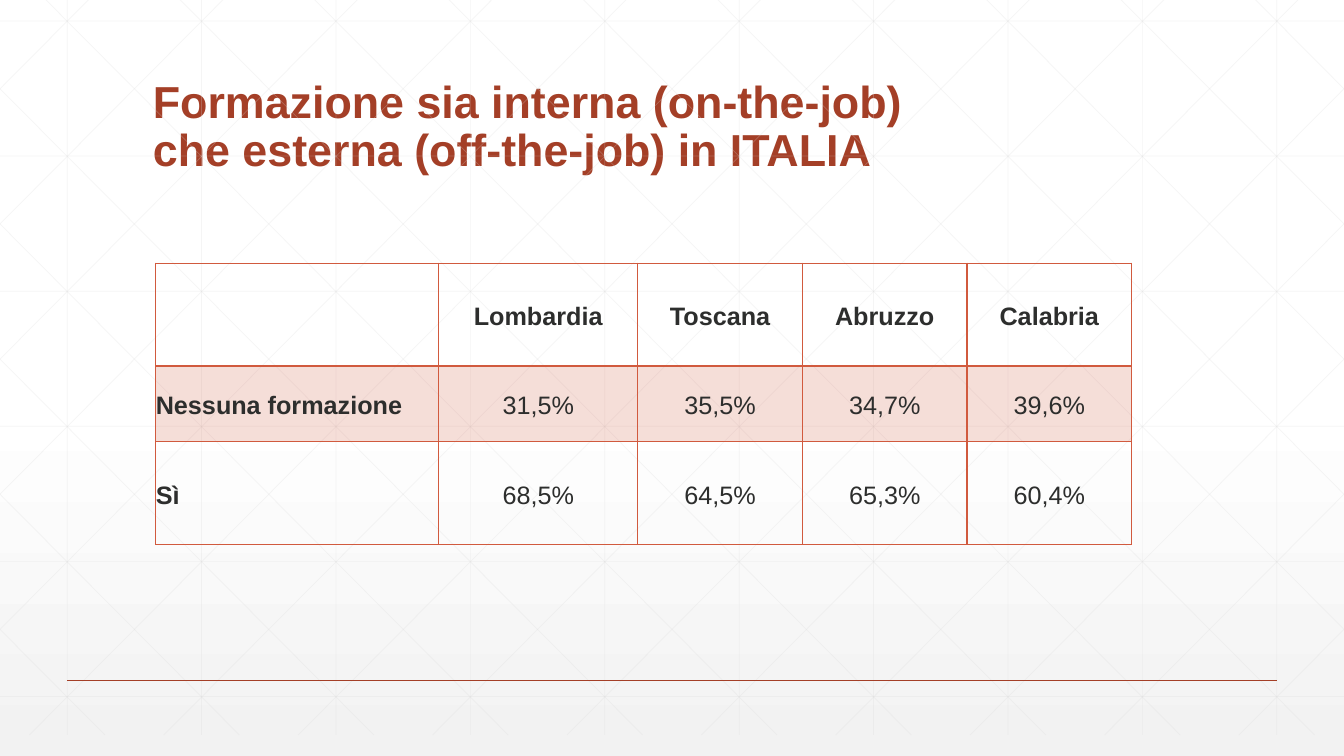
import pptx
import pptx.util
import pptx.dml.color
import pptx.enum.shapes
import pptx.enum.text
import pptx.oxml
import pptx.oxml.ns

Pt = pptx.util.Pt
ALIGN = pptx.enum.text.PP_ALIGN
ANCHOR = pptx.enum.text.MSO_ANCHOR
NS = pptx.oxml.ns.nsdecls("a")
qn = pptx.oxml.ns.qn

WIDTH, HEIGHT = 960, 540
COLORS = {
    "white": "FFFFFF",
    "mist": "F2F2F2",
    "grid": "D9D9D9",
    "rust": "A43F27",
    "accent": "D15A3E",
    "ink": "2D2E2D",
}
TRAINING = [
    ["", "Lombardia", "Toscana", "Abruzzo", "Calabria"],
    ["Nessuna formazione", "31,5%", "35,5%", "34,7%", "39,6%"],
    ["Sì", "68,5%", "64,5%", "65,3%", "60,4%"],
]


def rgb(name):
    return pptx.dml.color.RGBColor.from_string(COLORS[name])


def set_opacity(element, percent):
    color = next(element.iter(qn("a:srgbClr")))
    color.append(pptx.oxml.parse_xml(f'<a:alpha {NS} val="{percent * 1000}"/>'))


def write(frame, text, size, color, bold=False, align=ALIGN.LEFT, spacing=1.0):
    frame.word_wrap = True
    frame.text = text
    paragraph = frame.paragraphs[0]
    paragraph.alignment = align
    paragraph.line_spacing = spacing
    for run in paragraph.runs:
        run.font.name = "Arial"
        run.font.size = Pt(size)
        run.font.bold = bold
        run.font.color.rgb = rgb(color)


def draw_line(slide, start, end, color, width, opacity=100):
    line = slide.shapes.add_connector(
        pptx.enum.shapes.MSO_CONNECTOR.STRAIGHT, *(Pt(value) for value in (*start, *end))
    )
    line.line.color.rgb = rgb(color)
    line.line.width = Pt(width)
    properties = line._element.spPr
    if opacity < 100:
        set_opacity(properties, opacity)
    properties.append(pptx.oxml.parse_xml(f"<a:effectLst {NS}/>"))


def paint_background(slide):
    fill = slide.background.fill
    fill.gradient()
    gradient = next(slide._element.iter(qn("a:gradFill")))
    stops = "".join(
        f'<a:gs pos="{position * 1000}"><a:srgbClr val="{COLORS[name]}"/></a:gs>'
        for position, name in ((0, "white"), (53, "white"), (100, "mist"))
    )
    gradient.replace(
        gradient.find(qn("a:gsLst")),
        pptx.oxml.parse_xml(f"<a:gsLst {NS}>{stops}</a:gsLst>"),
    )
    gradient.find(qn("a:lin")).set("ang", "5400000")


def draw_lattice(slide, left, top, width, height):
    step, run = 96, 537
    right, bottom = left + width, top + height
    segments = [((x, top), (x, bottom)) for x in range(left + 48, right, step)]
    segments += [
        ((left, top + 30 + 96.5 * row), (right, top + 30 + 96.5 * row)) for row in range(6)
    ]
    diagonals = []
    for origin in range(left + 18 - 5 * step, right, step):
        ends = max(origin, left), min(origin + run, right)
        diagonals.append([(x, top + (x - origin) * height / run) for x in ends])
    segments += diagonals
    segments += [[(left + right - x, y) for x, y in diagonal] for diagonal in diagonals]
    for start, end in segments:
        draw_line(slide, start, end, "grid", 0.5, opacity=25)


def place_title(slide, left, top, width, height):
    title = slide.shapes.title
    title.left, title.top, title.width, title.height = map(Pt, (left, top, width, height))
    write(
        title.text_frame,
        "Formazione sia interna (on-the-job)\vche esterna (off-the-job) in ITALIA",
        size=32, color="rust", bold=True, spacing=0.9,
    )
    title.text_frame.vertical_anchor = ANCHOR.BOTTOM
    title.text_frame.auto_size = pptx.enum.text.MSO_AUTO_SIZE.NONE


def set_borders(cell, **widths):
    properties = cell._tc.get_or_add_tcPr()
    for index, side in enumerate("LRTB"):
        properties.insert(index, pptx.oxml.parse_xml(
            f'<a:ln{side} {NS} w="{Pt(widths.get(side, 1))}"><a:solidFill>'
            f'<a:srgbClr val="{COLORS["accent"]}"/></a:solidFill></a:ln{side}>'
        ))


def place_training_table(slide, left, top, width, height):
    table = slide.shapes.add_table(
        len(TRAINING), len(TRAINING[0]), Pt(left), Pt(top), Pt(width), Pt(height)
    ).table
    table.first_row = table.horz_banding = False
    for column, share in zip(table.columns, (0.29, 0.204, 0.1687, 0.1687, 0.1686)):
        column.width = Pt(width * share)
    for row, share in zip(table.rows, (0.365, 0.27, 0.365)):
        row.height = Pt(height * share)
    for r, values in enumerate(TRAINING):
        for c, value in enumerate(values):
            cell = table.cell(r, c)
            cell.margin_left = cell.margin_right = cell.margin_top = cell.margin_bottom = 0
            cell.vertical_anchor = ANCHOR.MIDDLE
            if value:
                write(
                    cell.text_frame, value, size=18, color="ink",
                    bold=r == 0 or c == 0,
                    align=ALIGN.CENTER if c else ALIGN.JUSTIFY, spacing=1.15,
                )
            if r == 1:
                cell.fill.solid()
                cell.fill.fore_color.rgb = rgb("accent")
                set_opacity(cell._tc.tcPr, 20)
            else:
                cell.fill.background()
            set_borders(cell, T=2 if r == 1 else 1, B=2 if r == 0 else 1)


def main():
    presentation = pptx.Presentation()
    presentation.slide_width, presentation.slide_height = Pt(WIDTH), Pt(HEIGHT)
    slide = presentation.slides.add_slide(presentation.slide_layouts[5])
    paint_background(slide)
    draw_lattice(slide, 0, -15, WIDTH, 540)
    draw_line(slide, (48, 486), (912, 486), "rust", 1)
    place_title(slide, 102, 39.6, 756, 90)
    place_training_table(slide, 111.3, 188, 697, 201)
    presentation.save("out.pptx")


if __name__ == "__main__":
    main()
